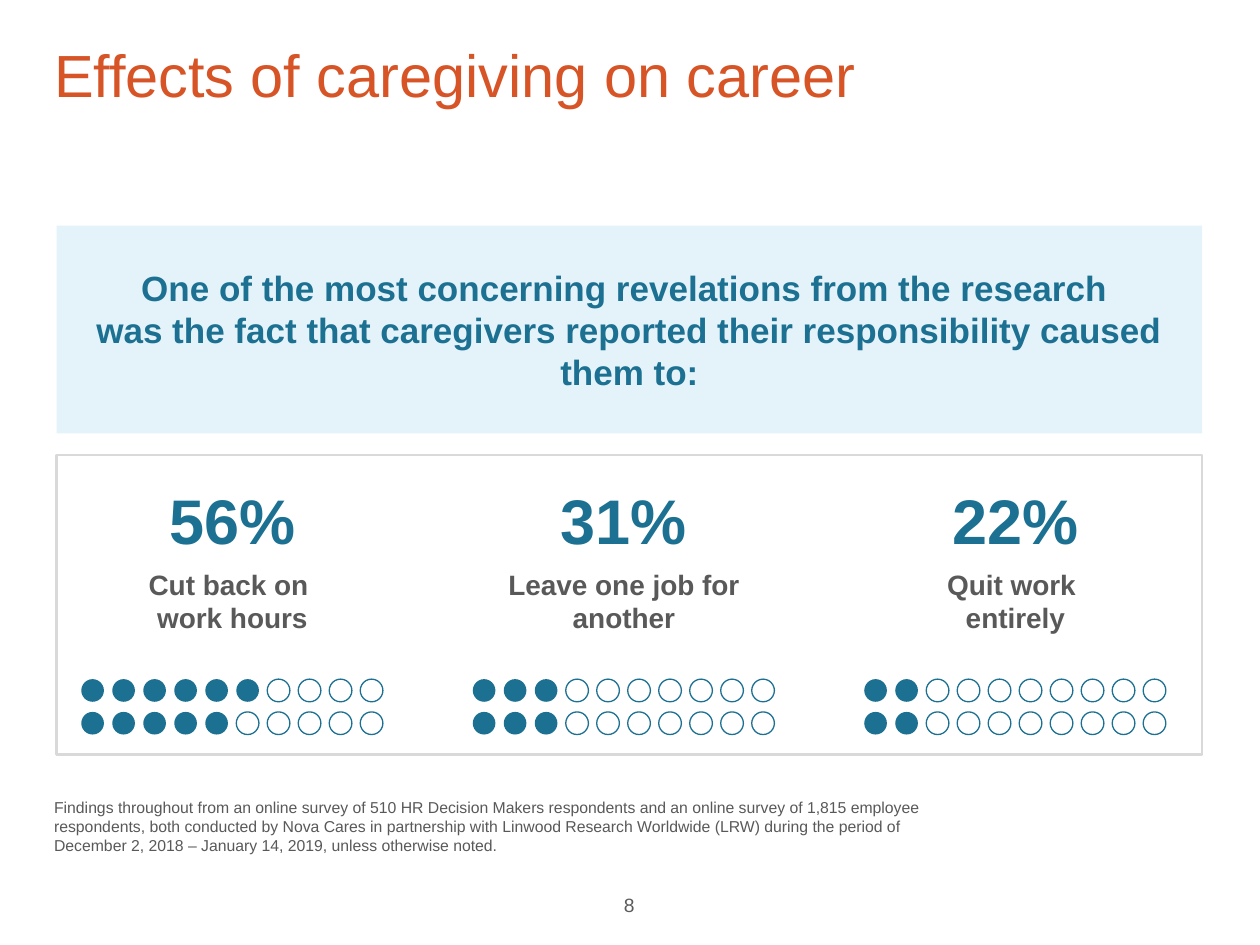
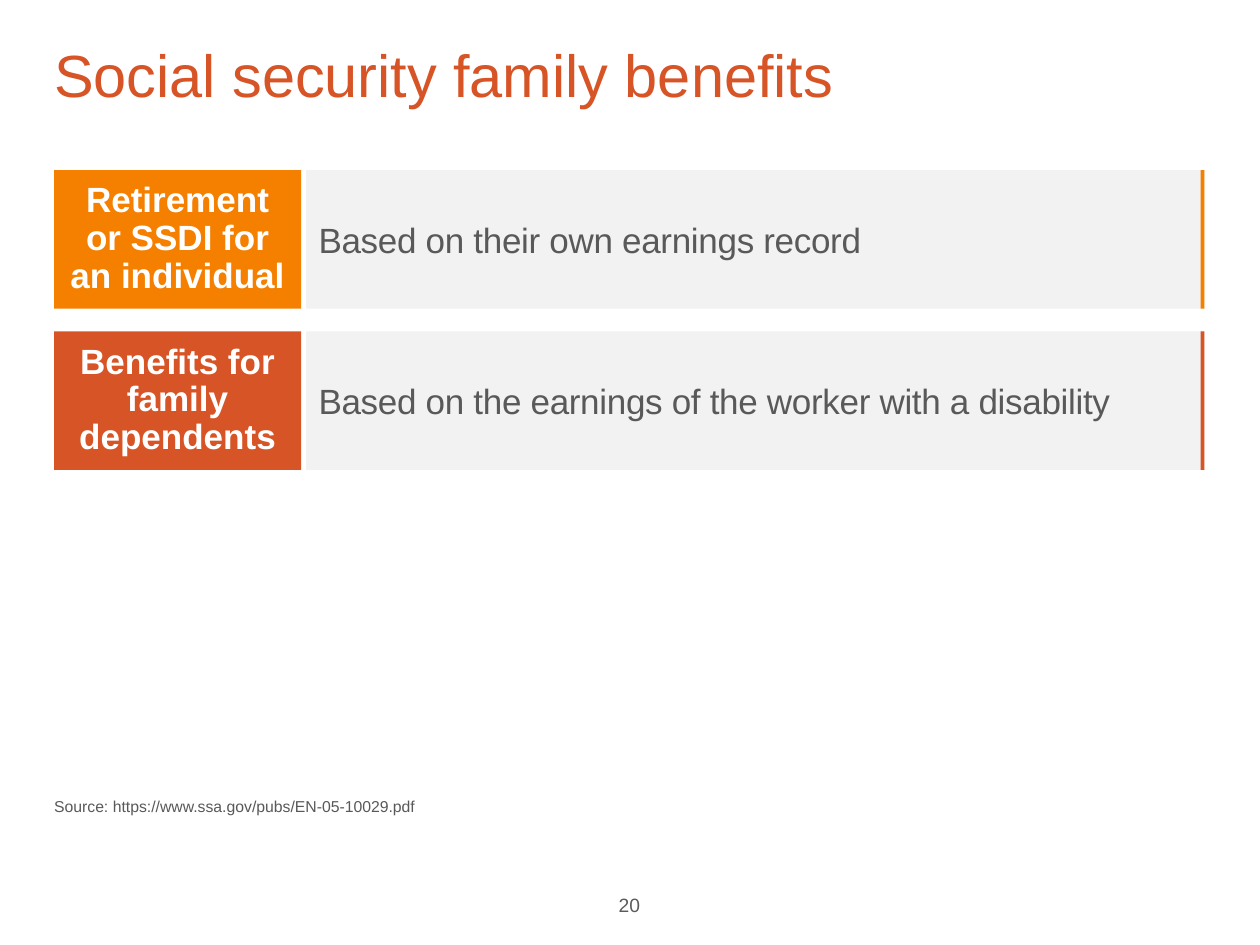
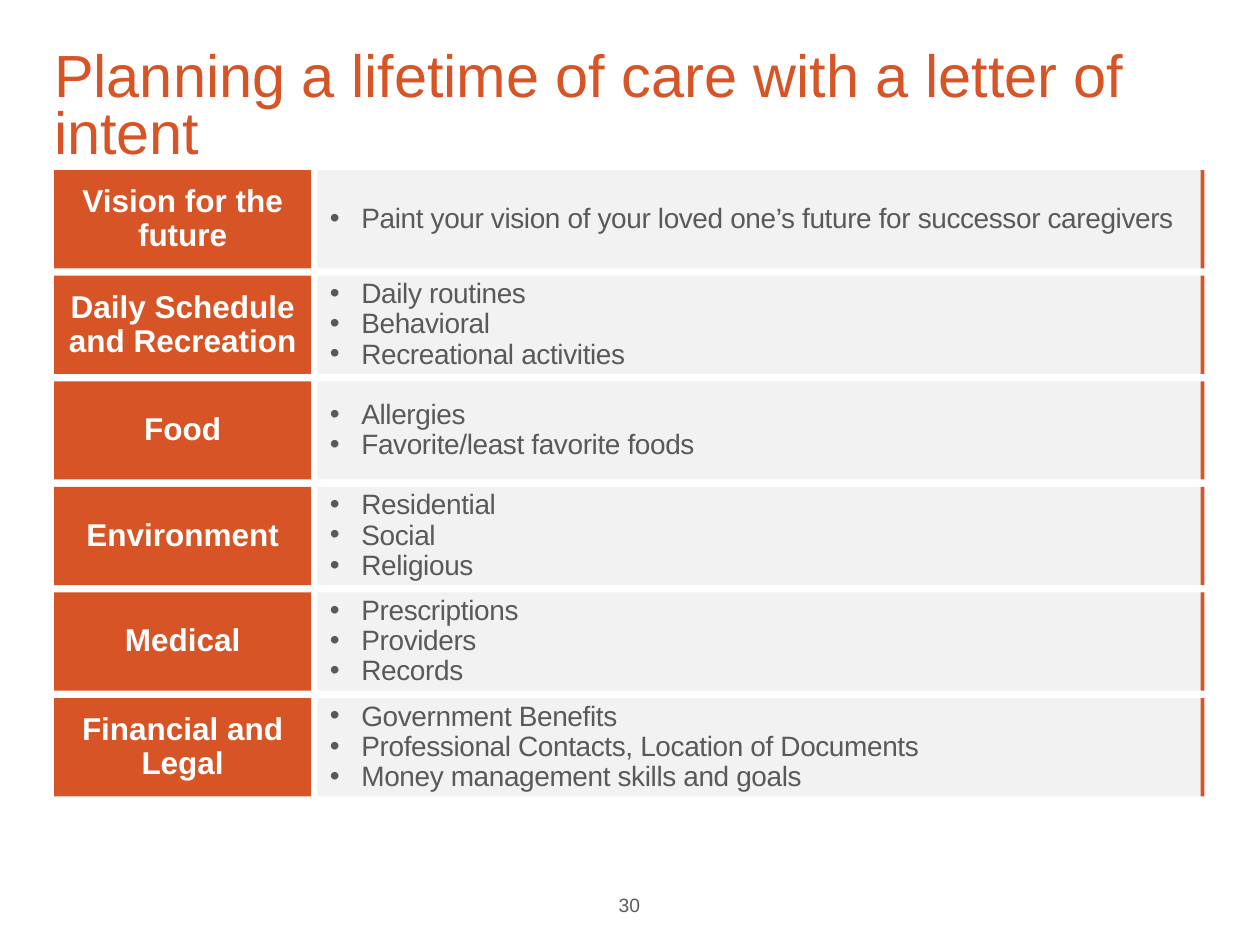
import math

from lxml import etree
from pptx import Presentation
from pptx import util as u
from pptx.dml.color import RGBColor
from pptx.enum import shapes, text
from pptx.oxml.ns import qn

COLUMNS, ROWS = 100, 75
FONT = "Arial"
COLORS = {
    "orange": "F58000", "rust": "D75426", "teal": "1C7091", "ice": "E4F3FA",
    "panel": "F2F2F2", "border": "D9D9D9", "body": "595959",
    "number": "5B5B5B", "white": "FFFFFF",
}
LEFT, RIGHT = 4.3, 95.6
CENTER, START = text.PP_ALIGN.CENTER, text.PP_ALIGN.LEFT
PLAIN_INSETS, CARD_INSETS, NO_INSETS = (1, 0.5, 1, 0.5), (1, 0.7, 1, 0.7), (0, 0, 0, 0)


class Deck:
    """Shared style plus the slide being filled; lengths are grid columns and rows."""

    def __init__(self):
        self.prs = Presentation()
        self.prs.slide_width, self.prs.slide_height = u.Inches(10), u.Inches(7.5)
        self.slide = None

    def cols(self, count):
        return round(self.prs.slide_width * count / COLUMNS)

    def rows(self, count):
        return round(self.prs.slide_height * count / ROWS)

    def place(self, left, top, width, height):
        return self.cols(left), self.rows(top), self.cols(width), self.rows(height)

    def color(self, name):
        return RGBColor.from_string(COLORS[name])

    def frame(self, shape, insets, anchor=text.MSO_ANCHOR.TOP):
        frame = shape.text_frame
        frame.word_wrap = True
        frame.auto_size = text.MSO_AUTO_SIZE.NONE
        frame.vertical_anchor = anchor
        left, top, right, bottom = insets
        frame.margin_left, frame.margin_right = self.cols(left), self.cols(right)
        frame.margin_top, frame.margin_bottom = self.rows(top), self.rows(bottom)
        return frame

    def paragraph(self, frame, content, size, color, bold=False, align=START,
                  spacing=None, before=0, bullet=False, tracking=None):
        """Add one paragraph; a newline in the content is a line break."""
        first = not frame.paragraphs[0].runs
        paragraph = frame.paragraphs[0] if first else frame.add_paragraph()
        if bullet:
            props = paragraph._p.get_or_add_pPr()
            props.set("marL", str(self.cols(2.5)))
            props.set("indent", str(-self.cols(2.5)))
            etree.SubElement(props, qn("a:buFont")).set("typeface", FONT)
            etree.SubElement(props, qn("a:buChar")).set("char", "•")
        paragraph.alignment = align
        if spacing:
            paragraph.line_spacing = spacing
        if before and not first:
            paragraph.space_before = u.Pt(before)
        for index, line in enumerate(content.split("\n")):
            if index:
                paragraph.add_line_break()
            run = paragraph.add_run()
            run.text = line
            run.font.name, run.font.size, run.font.bold = FONT, u.Pt(size), bold
            run.font.color.rgb = self.color(color)
            if tracking:
                run._r.get_or_add_rPr().set("spc", str(round(tracking * 100)))

    def new_slide(self, title, number):
        self.slide = self.prs.slides.add_slide(self.prs.slide_layouts[5])
        heading = self.slide.shapes.title
        heading.left, heading.top, heading.width, heading.height = self.place(LEFT, 4.1, 91.2, 7.8)
        self.paragraph(self.frame(heading, (0, 0, 1, 0.5)), title, 34, "rust", spacing=0.8)
        self.paragraph(self.textbox(46.8, 70.4, 6.3, 4.6), number, 11, "number", align=CENTER)

    def textbox(self, left, top, width, height, insets=PLAIN_INSETS):
        box = self.slide.shapes.add_textbox(*self.place(left, top, width, height))
        return self.frame(box, insets)

    def shape(self, kind, left, top, width, height, fill=None, line=None, weight=0.75):
        shape = self.slide.shapes.add_shape(kind, *self.place(left, top, width, height))
        shape.shadow.inherit = False
        if fill:
            shape.fill.solid()
            shape.fill.fore_color.rgb = self.color(fill)
        else:
            shape.fill.background()
        if line:
            shape.line.color.rgb = self.color(line)
            shape.line.width = u.Pt(weight)
        else:
            shape.line.fill.background()
        return shape

    def rect(self, *bounds, **style):
        return self.shape(shapes.MSO_SHAPE.RECTANGLE, *bounds, **style)

    def dot(self, left, top, filled):
        style = {"fill": "teal"} if filled else {"line": "teal"}
        self.shape(shapes.MSO_SHAPE.OVAL, left, top, 1.8, 1.8, **style)

    def stat(self, left, percent, caption):
        """Percentage, caption and two rows of ten dots, each dot worth 5%."""
        frame = self.textbox(left, 37.7, 28.3, 13.3)
        self.paragraph(frame, f"{percent}%", 36, "teal", True, CENTER)
        self.paragraph(frame, caption, 16, "body", True, CENTER, before=6)
        filled = round(percent / 5)
        for row, count in enumerate((math.ceil(filled / 2), filled // 2)):
            for column in range(10):
                self.dot(left + 2.15 + 2.46 * column, 53.9 + 2.6 * row, column < count)

    def card(self, top, height, label, details, accent, label_width, gap,
             label_size, detail_size, **detail_style):
        """Coloured label, grey detail panel and a thin accent on the right edge."""
        middle = text.MSO_ANCHOR.MIDDLE
        label_box = self.rect(LEFT, top, label_width, height, fill=accent)
        self.paragraph(self.frame(label_box, CARD_INSETS, middle), label, label_size,
                       "white", True, CENTER, spacing=0.9)
        panel_left = LEFT + label_width + gap
        panel = self.rect(panel_left, top, RIGHT - panel_left, height, fill="panel")
        panel_frame = self.frame(panel, CARD_INSETS, middle)
        for detail in details:
            self.paragraph(panel_frame, detail, detail_size, "body", tracking=-0.2,
                           **detail_style)
        self.rect(RIGHT - 0.3, top, 0.3, height, fill=accent)

    def footnote(self, content, top, height):
        self.paragraph(self.textbox(LEFT, top, 70.4, height, NO_INSETS), content, 9, "body")


def career_slide(deck):
    deck.new_slide("Effects of caregiving on career", "8")
    # Key message
    message = deck.rect(4.5, 17.9, 90.9, 16.5, fill="ice")
    deck.paragraph(deck.frame(message, PLAIN_INSETS, text.MSO_ANCHOR.MIDDLE),
                   "One of the most concerning revelations from the research \n"
                   "was the fact that caregivers reported their responsibility "
                   "caused them to:", 20, "teal", True, CENTER)
    # Survey results
    deck.rect(4.5, 36.1, 90.9, 23.8, line="border", weight=1.5)
    effects = [(56, "Cut back on \nwork hours"),
               (31, "Leave one job for another"),
               (22, "Quit work \nentirely")]
    for index, (percent, caption) in enumerate(effects):
        deck.stat(LEFT + 31.07 * index, percent, caption)
    deck.footnote(
        "Findings throughout from an online survey of 510 HR Decision Makers respondents and "
        "an online survey of 1,815 employee respondents, both conducted by Nova Cares in "
        "partnership with Linwood Research Worldwide (LRW) during the period of "
        "December 2, 2018 – January 14, 2019, unless otherwise noted.", 63.3, 4.5)


def benefits_slide(deck):
    deck.new_slide("Social security family benefits", "20")
    benefits = [
        ("Retirement or SSDI for an individual", "Based on their own earnings record", "orange"),
        ("Benefits for family dependents",
         "Based on the earnings of the worker with a disability", "rust"),
    ]
    for index, (label, basis, accent) in enumerate(benefits):
        deck.card(13.5 + 12.8 * index, 11, label, [basis], accent, 19.6, 0.4, 20, 20)
    deck.footnote("Source: https://www.ssa.gov/pubs/EN-05-10029.pdf", 63.2, 1.5)


def letter_slide(deck):
    deck.new_slide("Planning a lifetime of care with a letter of intent", "30")
    topics = [
        ("Vision for the future",
         ["Paint your vision of your loved one’s future for successor caregivers"]),
        ("Daily Schedule and Recreation",
         ["Daily routines", "Behavioral", "Recreational activities"]),
        ("Food", ["Allergies", "Favorite/least favorite foods"]),
        ("Environment", ["Residential", "Social", "Religious"]),
        ("Medical", ["Prescriptions", "Providers", "Records"]),
        ("Financial and Legal",
         ["Government Benefits", "Professional Contacts, Location of Documents",
          "Money management skills and goals"]),
    ]
    for index, (label, details) in enumerate(topics):
        deck.card(13.5 + 8.38 * index, 7.8, label, details, "rust", 20.4, 0.5, 18, 16,
                  bullet=True, spacing=0.9)


def main():
    deck = Deck()
    career_slide(deck)
    benefits_slide(deck)
    letter_slide(deck)
    deck.prs.save("out.pptx")


if __name__ == "__main__":
    main()
